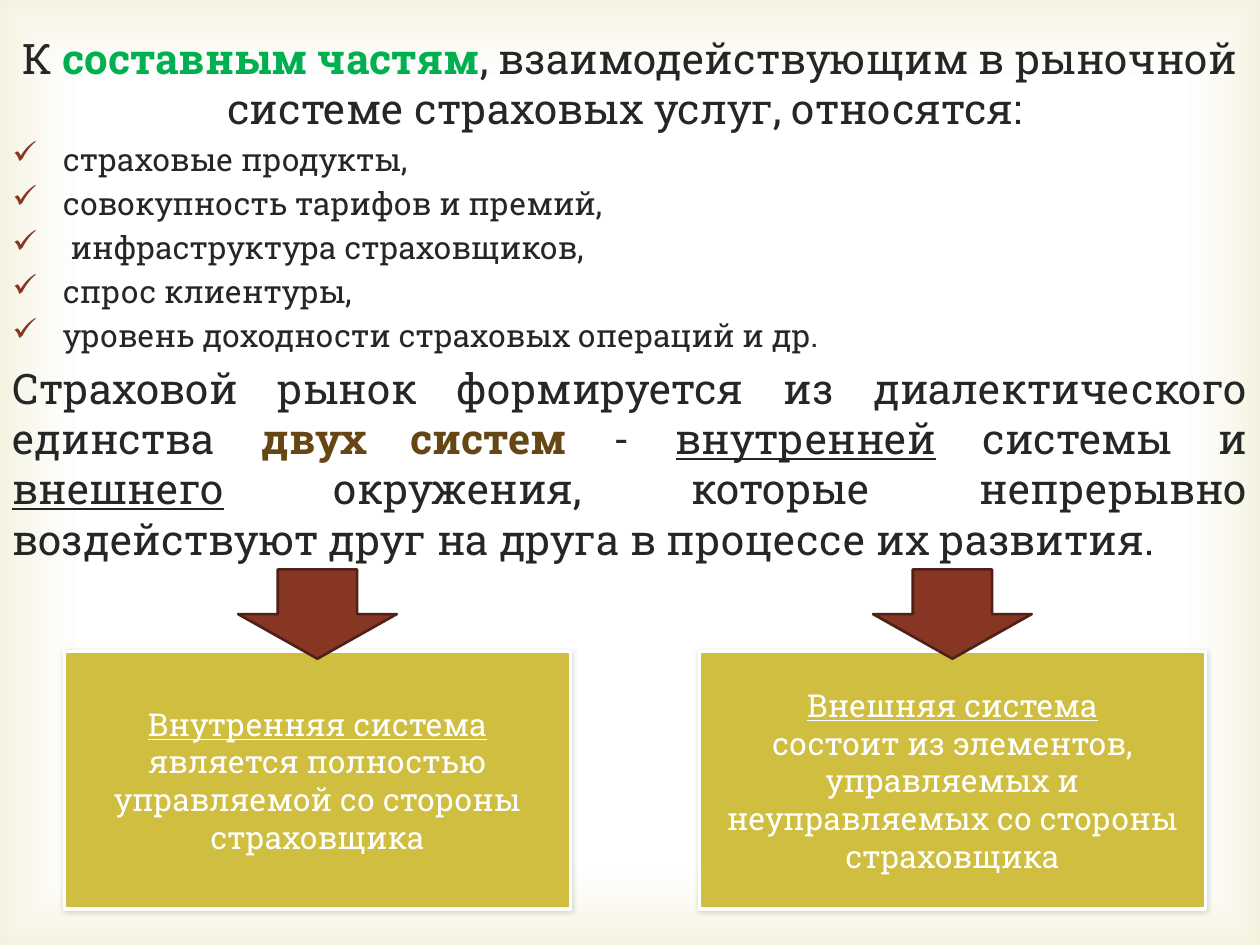
from dataclasses import dataclass
from typing import NamedTuple

from lxml.etree import fromstring
from pptx import Presentation
from pptx.dml.color import RGBColor
from pptx.enum.shapes import MSO_SHAPE as Shape
from pptx.enum.text import MSO_ANCHOR as Anchor, PP_ALIGN as Align
from pptx.util import Cm, Pt

DRAWING = "http://schemas.openxmlformats.org/drawingml/2006/main"


@dataclass(frozen=True)
class Theme:
    font: str = "Roboto Slab"
    text: str = "262626"
    green: str = "00B050"
    brown: str = "674616"
    white: str = "FFFFFF"
    glow: str = "D1CA75"
    card: str = "D0BE40"
    arrow: str = "873624"
    arrow_edge: str = "4F2015"
    large: int = 24
    small: int = 18


class Span(NamedTuple):
    text: str
    color: str = Theme.text
    bold: bool = False
    underline: bool = False


class System(NamedTuple):
    left: float
    title: str
    description: str


THEME = Theme()
INTRO = [
    Span("К "),
    Span("составным частям", THEME.green, bold=True),
    Span(", взаимодействующим в рыночной системе страховых услуг, относятся: "),
]
PARTS = [
    "страховые продукты, ",
    "совокупность тарифов и премий,",
    " инфраструктура страховщиков, ",
    "спрос клиентуры, ",
    "уровень доходности страховых операций и др.",
]
SUMMARY = [
    Span("Страховой рынок формируется из диалектического единства "),
    Span("двух систем ", THEME.brown, bold=True),
    Span("- "),
    Span("внутренней", underline=True),
    Span(" системы и "),
    Span("внешнего", underline=True),
    Span(" окружения, которые непрерывно воздействуют друг на друга "
         "в процессе их развития. "),
]
SYSTEMS = [
    System(1.3, "Внутренняя система",
           "является полностью управляемой со стороны страховщика"),
    System(14.1, "Внешняя система",
           "состоит из элементов, управляемых и неуправляемых "
           "со стороны страховщика"),
]
CARD_TOP, CARD_WIDTH, CARD_HEIGHT = 13.13, 10.2, 5.2
ARROW_TOP, ARROW_WIDTH, ARROW_HEIGHT = 11.48, 3.2, 1.8


def drawing(markup: str):
    """Parse one DrawingML element, adding its namespace."""
    name, rest = markup.split(" ", 1)
    return fromstring(f'{name} xmlns:a="{DRAWING}" {rest}')


def write(para, spans: list[Span], size: int, align: Align) -> None:
    para.alignment = align
    for span in spans:
        run = para.add_run()
        run.text = span.text
        formats = {"name": THEME.font, "size": Pt(size), "bold": span.bold,
                   "underline": span.underline}
        for name, value in formats.items():
            setattr(run.font, name, value)
        run.font.color.rgb = RGBColor.from_string(span.color)


def add_check(para) -> None:
    props = para._p.get_or_add_pPr()
    props.set("marL", str(Cm(1.02)))
    props.set("indent", str(-Cm(1.02)))
    props.append(drawing(
        f'<a:buClr ><a:srgbClr val="{THEME.arrow}"/></a:buClr>'))
    props.append(drawing('<a:buChar char="✓"/>'))


def add_block(page, kind: Shape, left: float, top: float, width: float,
              height: float, fill: str, edge: str, weight: float):
    block = page.shapes.add_shape(kind, Cm(left), Cm(top), Cm(width), Cm(height))
    block.shadow.inherit = False
    block.fill.solid()
    block.fill.fore_color.rgb = RGBColor.from_string(fill)
    block.line.color.rgb = RGBColor.from_string(edge)
    block.line.width = Pt(weight)
    return block


def add_glow(page, deck) -> None:
    glow = page.shapes.add_shape(Shape.RECTANGLE, 0, 0,
                                 deck.slide_width, deck.slide_height)
    glow.shadow.inherit = False
    glow.line.fill.background()
    stops = "".join(
        f'<a:gs pos="{place * 1000}"><a:srgbClr val="{color}">'
        f'<a:alpha val="{alpha * 1000}"/></a:srgbClr></a:gs>'
        for place, color, alpha in [(83, THEME.white, 11), (100, THEME.glow, 23)])
    gradient = drawing(
        f'<a:gradFill rotWithShape="1"><a:gsLst>{stops}</a:gsLst>'
        '<a:path path="rect"><a:fillToRect l="50000" t="50000" r="50000" '
        'b="50000"/></a:path></a:gradFill>')
    glow._element.spPr.find(f"{{{DRAWING}}}prstGeom").addnext(gradient)


def add_body(page) -> None:
    box = page.shapes.add_textbox(Cm(0), Cm(0.53), Cm(25.4), Cm(18.26))
    frame = box.text_frame
    frame.word_wrap = True
    rows = [(INTRO, THEME.large, Align.CENTER, False)]
    rows += [([Span(part)], THEME.small, Align.JUSTIFY, True) for part in PARTS]
    rows.append((SUMMARY, THEME.large, Align.JUSTIFY, False))
    for index, (spans, size, align, checked) in enumerate(rows):
        para = frame.add_paragraph() if index else frame.paragraphs[0]
        write(para, spans, size, align)
        para.space_before = Pt(size * 0.2)
        if checked:
            add_check(para)


def add_card(page, system: System) -> None:
    card = add_block(page, Shape.RECTANGLE, system.left, CARD_TOP, CARD_WIDTH,
                     CARD_HEIGHT, THEME.card, THEME.white, 2)
    card._element.spPr.find(f"{{{DRAWING}}}effectLst").append(drawing(
        f'<a:outerShdw blurRad="{Pt(3)}" dist="{Pt(1)}" dir="5400000" '
        'rotWithShape="0"><a:srgbClr val="000000"><a:alpha val="15000"/>'
        '</a:srgbClr></a:outerShdw>'))
    frame = card.text_frame
    frame.word_wrap = True
    frame.vertical_anchor = Anchor.MIDDLE
    write(frame.paragraphs[0], [Span(system.title, THEME.white, underline=True)],
          THEME.small, Align.CENTER)
    write(frame.add_paragraph(), [Span(system.description, THEME.white)],
          THEME.small, Align.CENTER)


def add_arrow(page, system: System) -> None:
    left = system.left + (CARD_WIDTH - ARROW_WIDTH) / 2
    add_block(page, Shape.DOWN_ARROW, left, ARROW_TOP, ARROW_WIDTH,
              ARROW_HEIGHT, THEME.arrow, THEME.arrow_edge, 1.5)


def main() -> None:
    deck = Presentation()
    deck.slide_width, deck.slide_height = Cm(25.4), Cm(19.05)
    page = deck.slides.add_slide(deck.slide_layouts[6])

    # Tinted edges and main text
    add_glow(page, deck)
    add_body(page)

    # The two systems, with arrows on top of the cards
    for add_part in (add_card, add_arrow):
        for system in SYSTEMS:
            add_part(page, system)

    deck.save("out.pptx")


if __name__ == "__main__":
    main()
